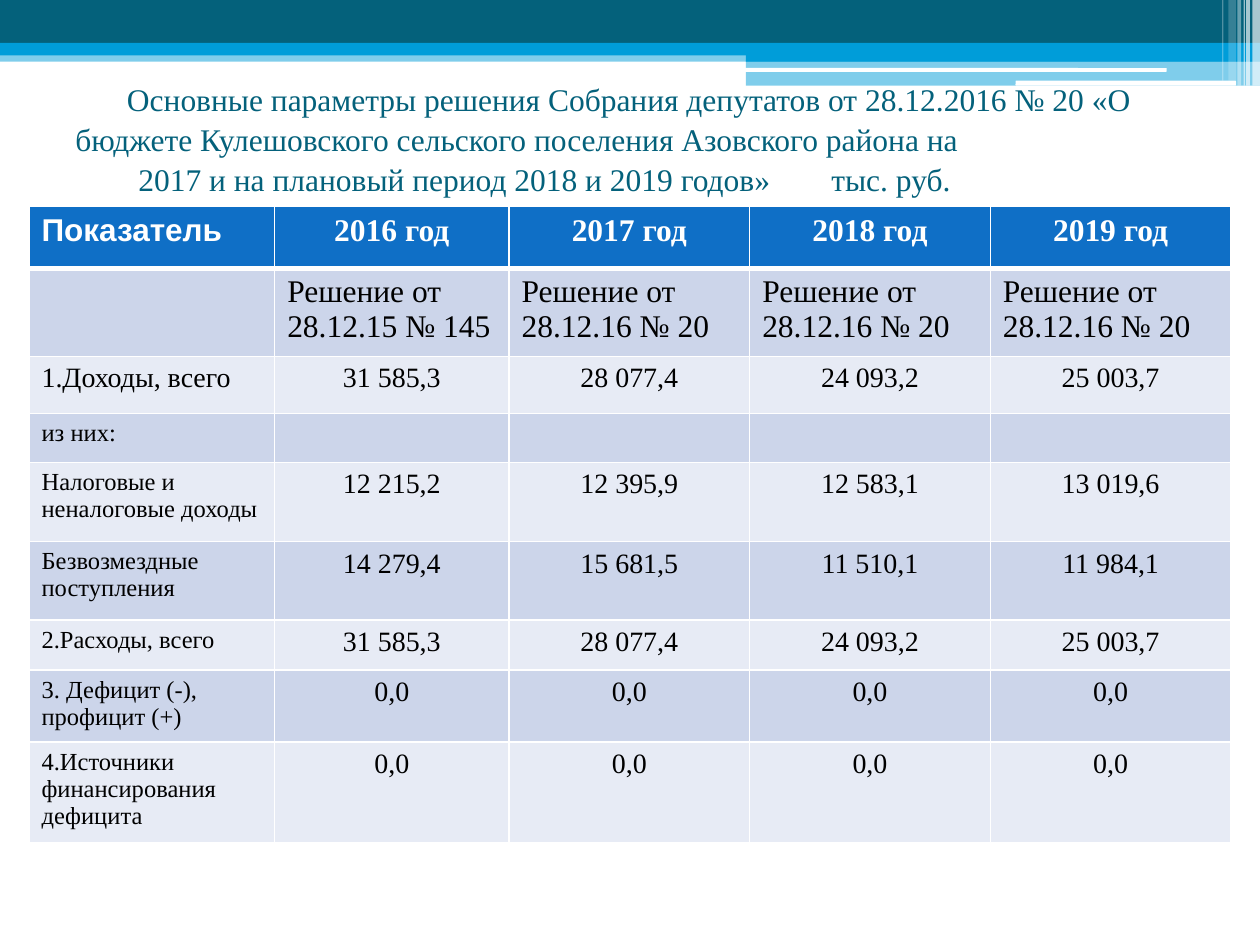
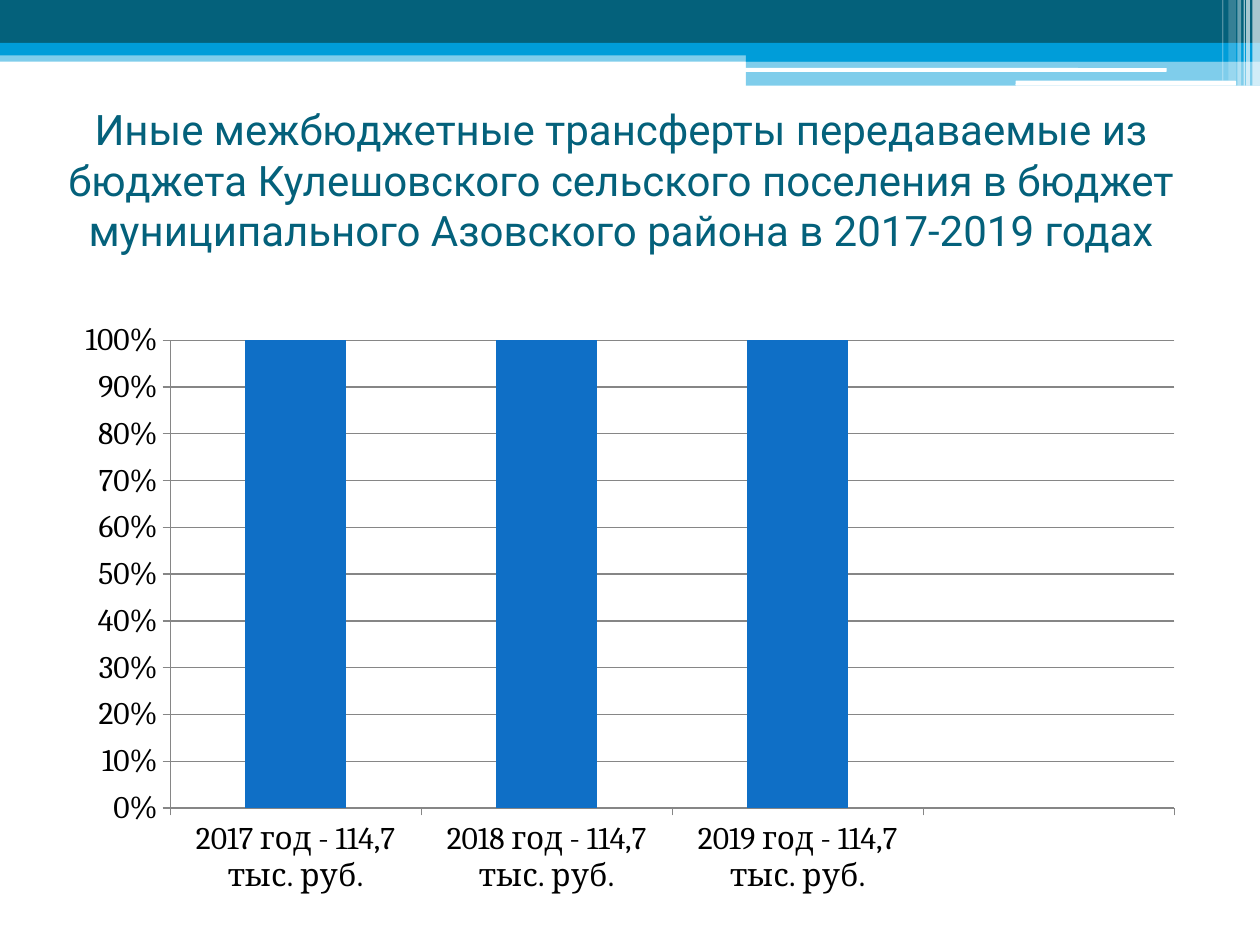
import pptx
import pptx.util
import pptx.dml.color
import pptx.chart.data
import pptx.enum.chart
import pptx.enum.shapes
import pptx.enum.text
import pptx.oxml.ns
from lxml import etree

WIDTH, HEIGHT = pptx.util.Inches(10), pptx.util.Inches(7.5)
TEAL, SKY, WHITE, BLACK = "04617B", "009DD9", "FFFFFF", "000000"
BLUE, GRID = "0F6FC6", "868686"
ROW_TINTS = ("CCD5EA", "E7EBF5")
SERIF = "Times New Roman"
ALIGN = pptx.enum.text.PP_ALIGN
RECT = pptx.enum.shapes.MSO_SHAPE.RECTANGLE
ROUND = pptx.enum.shapes.MSO_SHAPE.ROUNDED_RECTANGLE

# Left, top, width and height in percent of the slide; then colour, opacity, outline.
BANDS = [
    (0, 5.33, 100, 1.2, SKY, 50, RECT),
    (0, 0, 100, 4.53, TEAL, 100, RECT),
    (0, 4.53, 100, 1.33, SKY, 100, RECT),
    (59.2, 5.2, 40.8, 1.33, SKY, 100, RECT),
    (59.2, 6.4, 40.8, 2.67, SKY, 50, RECT),
    (59.1, 7.2, 33.5, 0.4, WHITE, 100, ROUND),
    (80.6, 8.53, 17.5, 0.53, WHITE, 100, ROUND),
]
STRIPES = [
    (99.4, 0.6, 9.07, 65),
    (98.9, 0.3, 9.07, 65),
    (98.7, 0.1, 9.07, 60),
    (98.2, 0.3, 9.07, 40),
    (97.5, 0.6, 8.53, 20),
    (97, 0.1, 8.53, 30),
]

COLUMN_WIDTHS = [19.5, 18.6, 19.1, 19.1, 19.1]
ROW_HEIGHTS = [6.53, 9.33, 6, 5.2, 8.4, 8.27, 5.33, 7.6, 10.67]
BUDGET = [
    ["Показатель", "2016 год", "2017 год", "2018 год", "2019 год"],
    ["", "Решение от 28.12.15 № 145"] + ["Решение от 28.12.16 № 20"] * 3,
    ["1.Доходы, всего", "31 585,3", "28 077,4", "24 093,2", "25 003,7"],
    ["из них:", "", "", "", ""],
    ["Налоговые и неналоговые доходы", "12 215,2", "12 395,9", "12 583,1", "13 019,6"],
    ["Безвозмездные поступления", "14 279,4", "15 681,5", "11 510,1", "11 984,1"],
    ["2.Расходы, всего", "31 585,3", "28 077,4", "24 093,2", "25 003,7"],
    ["3. Дефицит (-), профицит (+)"] + ["0,0"] * 4,
    ["4.Источники финансирования дефицита"] + ["0,0"] * 4,
]


def color(value):
    """Turn a hex string into a colour."""
    return pptx.dml.color.RGBColor.from_string(value)


def across(share):
    """Convert a percentage of the slide width to a length."""
    return round(WIDTH * share / 100)


def down(share):
    """Convert a percentage of the slide height to a length."""
    return round(HEIGHT * share / 100)


def area(left, top, width, height):
    """Convert four percentages to a position and size."""
    return across(left), down(top), across(width), down(height)


def child(parent, tag, **attributes):
    """Append a drawing element with the given attributes."""
    element = etree.SubElement(parent, pptx.oxml.ns.qn("a:" + tag))
    for key, value in attributes.items():
        element.set(key, str(value))
    return element


def write(frame, text, size=18, font=SERIF, ink=BLACK, bold=False,
          align=ALIGN.LEFT, spacing=None):
    """Write one formatted paragraph and return it."""
    paragraph = frame.paragraphs[0]
    paragraph.text = text
    paragraph.alignment = align
    if spacing:
        paragraph.line_spacing = spacing
    for run in paragraph.runs:
        run.font.size = pptx.util.Pt(size)
        run.font.name = font
        run.font.bold = bold
        run.font.color.rgb = color(ink)
    if not text:
        child(paragraph._p, "endParaRPr", sz=size * 100)
    return paragraph


def add_band(slide, left, top, width, height, fill, opacity, outline):
    """Draw one flat, possibly translucent band."""
    band = slide.shapes.add_shape(outline, *area(left, top, width, height))
    band.shadow.inherit = False
    band.line.fill.background()
    band.fill.solid()
    band.fill.fore_color.rgb = color(fill)
    if opacity < 100:
        tint = band._element.spPr.find(".//" + pptx.oxml.ns.qn("a:srgbClr"))
        child(tint, "alpha", val=opacity * 1000)


def add_header(slide):
    """Draw the bands and corner stripes that every slide shares."""
    for band in BANDS:
        add_band(slide, *band)
    for left, width, height, opacity in STRIPES:
        add_band(slide, left, 0, width, height, WHITE, opacity, RECT)


def add_title(slide, place, text, **style):
    """Add a title centred vertically in its place."""
    frame = slide.shapes.add_textbox(*area(*place)).text_frame
    frame.word_wrap = True
    frame.vertical_anchor = pptx.enum.text.MSO_ANCHOR.MIDDLE
    return write(frame, text, ink=TEAL, **style)


def set_tabs(paragraph, first_indent, stops):
    """Indent the first line and set tab stops, in shares of the width."""
    properties = paragraph._p.get_or_add_pPr()
    properties.set("marL", "0")
    properties.set("indent", str(across(first_indent)))
    tabs = child(properties, "tabLst")
    for stop in stops:
        child(tabs, "tab", pos=across(stop), algn="l")


def set_borders(cell, top, bottom):
    """Give a cell white borders, one point wide at the sides."""
    properties = cell._tc.get_or_add_tcPr()
    for side, points in (("L", 1), ("R", 1), ("T", top), ("B", bottom)):
        line = child(properties, "ln" + side, w=pptx.util.Pt(points))
        child(child(line, "solidFill"), "srgbClr", val=WHITE)


def cell_style(row, column):
    """Choose the text format by the place of a cell in the table."""
    if row == 0:
        return dict(ink=WHITE, bold=True, font=SERIF if column else "Arial",
                    align=ALIGN.CENTER if column else ALIGN.LEFT)
    if row == 1:
        return {}
    if column:
        return dict(size=16, align=ALIGN.CENTER)
    return dict(size=16 if row == 2 else 14)


def add_budget_table(slide, left, top):
    """Add the table of budget figures."""
    place = area(left, top, sum(COLUMN_WIDTHS), sum(ROW_HEIGHTS))
    table = slide.shapes.add_table(len(BUDGET), len(COLUMN_WIDTHS), *place).table
    for column, width in zip(table.columns, COLUMN_WIDTHS):
        column.width = across(width)
    for row, height in zip(table.rows, ROW_HEIGHTS):
        row.height = down(height)
    for r, entries in enumerate(BUDGET):
        for c, entry in enumerate(entries):
            cell = table.cell(r, c)
            set_borders(cell, top=3 if r == 1 else 1, bottom=3 if r == 0 else 1)
            cell.fill.solid()
            cell.fill.fore_color.rgb = color(ROW_TINTS[(r - 1) % 2] if r else BLUE)
            write(cell.text_frame, entry, **cell_style(r, c))


def add_transfer_chart(slide, place):
    """Add the stacked column chart of transfers by year."""
    data = pptx.chart.data.CategoryChartData()
    data.categories = [f"{year} год - 114,7 тыс. руб." for year in (2017, 2018, 2019)] + [""]
    data.add_series("Series 1", [100, 100, 100, None])
    kind = pptx.enum.chart.XL_CHART_TYPE.COLUMN_STACKED_100
    chart = slide.shapes.add_chart(kind, *area(*place), data).chart
    chart.has_title = False
    chart.has_legend = False
    chart.font.size = pptx.util.Pt(18)
    chart.font.name = "Cambria"
    chart.font.color.rgb = color(BLACK)
    plot = chart.plots[0]
    plot.gap_width, plot.overlap, plot.vary_by_categories = 150, 100, False
    columns = plot.series[0].format.fill
    columns.solid()
    columns.fore_color.rgb = color(BLUE)
    shares = chart.value_axis
    shares.has_major_gridlines = True
    shares.tick_labels.number_format = "0%"
    shares.tick_labels.number_format_is_linked = False
    for axis in (chart.category_axis, shares):
        axis.major_tick_mark = pptx.enum.chart.XL_TICK_MARK.OUTSIDE
    for part in (chart.category_axis, shares, shares.major_gridlines):
        part.format.line.color.rgb = color(GRID)
        part.format.line.width = pptx.util.Pt(0.75)


def main():
    """Build both slides and save the presentation."""
    deck = pptx.Presentation()
    deck.slide_width, deck.slide_height = WIDTH, HEIGHT
    budget, transfers = (deck.slides.add_slide(deck.slide_layouts[6]) for _ in range(2))
    for slide in (budget, transfers):
        add_header(slide)

    heading = add_title(
        budget, (5, 7.33, 90, 14.53),
        "Основные параметры решения Собрания депутатов от 28.12.2016 № 20 «О "
        "бюджете Кулешовского сельского поселения Азовского района на"
        "\v\t2017 и на плановый период 2018 и 2019 годов»\tтыс. руб.",
        spacing=1.05)
    set_tabs(heading, 4.1, (8, 74.9))
    add_budget_table(budget, 2.3, 21.87)

    add_title(
        transfers, (4.3, 11.2, 90, 15.6),
        "Иные межбюджетные трансферты передаваемые из бюджета Кулешовского "
        "сельского поселения в бюджет муниципального Азовского района в "
        "2017-2019 годах",
        size=24, font="Roboto", align=ALIGN.CENTER)
    add_transfer_chart(transfers, (5, 32.8, 90, 63.07))
    deck.save("out.pptx")


if __name__ == "__main__":
    main()
